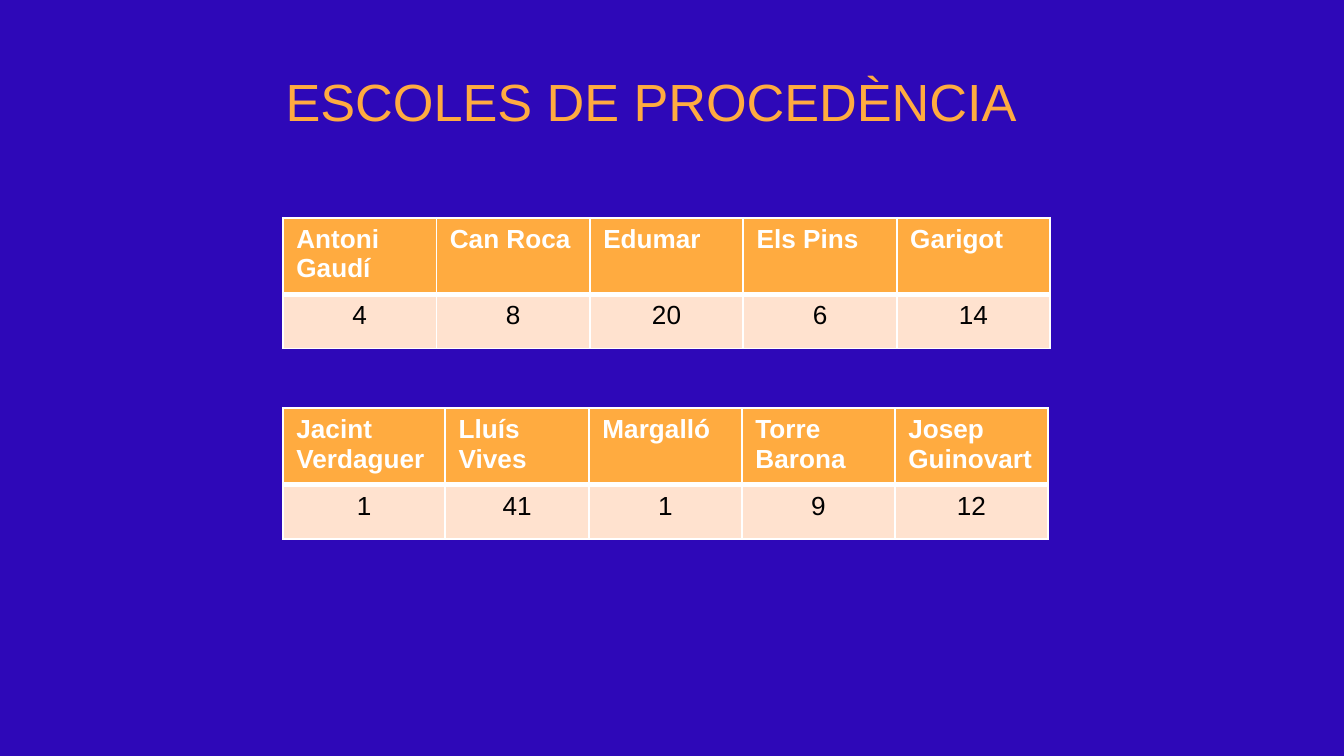
from dataclasses import dataclass

from lxml.etree import SubElement
from pptx import Presentation
from pptx.dml.color import RGBColor
from pptx.enum.text import MSO_ANCHOR, PP_ALIGN
from pptx.oxml.ns import qn
from pptx.slide import Slide
from pptx.table import _Cell
from pptx.text.text import TextFrame
from pptx.util import Emu, Inches, Pt

WIDE = Inches(10)
HIGH = Emu(WIDE * 9 // 16)
FONT = "Arial"
HUES = {
    "back": "2E08B8",
    "gold": "FFAB40",
    "peach": "FFE2CF",
    "white": "FFFFFF",
    "black": "000000",
}
ROWS = (10.1, 7.2)  # header and count rows, percent of slide height


@dataclass
class Grid:
    """Schools and pupil counts; lengths are percent of the slide."""
    left: float
    top: float
    cols: tuple[float, ...]
    pupils: dict[str, int]


GRIDS = (
    Grid(21.05, 28.8, (11.42,) * 5,
         {"Antoni\nGaudí": 4, "Can Roca": 8, "Edumar": 20,
          "Els Pins": 6, "Garigot": 14}),
    Grid(21.05, 54, (12.08, 10.7, 11.38, 11.38, 11.38),
         {"Jacint Verdaguer": 1, "Lluís Vives": 41, "Margalló": 1,
          "Torre Barona": 9, "Josep Guinovart": 12}),
)


def across(share: float) -> Emu:
    return Emu(round(WIDE * share / 100))


def down(share: float) -> Emu:
    return Emu(round(HIGH * share / 100))


def color(name: str) -> RGBColor:
    return RGBColor.from_string(HUES[name])


def write(frame: TextFrame, text: str, *, size: float, hue: str,
          bold: bool = False, align: PP_ALIGN = PP_ALIGN.LEFT) -> None:
    frame.text = text
    frame.word_wrap = True
    for para in frame.paragraphs:
        para.alignment = align
        for run in para.runs:
            font = run.font
            font.name, font.size, font.bold = FONT, Pt(size), bold
            font.color.rgb = color(hue)


def edge(cell: _Cell, top: float, base: float) -> None:
    """Draw white cell borders, with the given widths above and below."""
    props = cell._tc.get_or_add_tcPr()
    for side, width in (("L", 1), ("R", 1), ("T", top), ("B", base)):
        line = SubElement(props, qn(f"a:ln{side}"), w=str(Pt(width)))
        fill = SubElement(line, qn("a:solidFill"))
        SubElement(fill, qn("a:srgbClr"), val=HUES["white"])


def paint(cell: _Cell, hue: str, *, top: float = 1, base: float = 1) -> None:
    edge(cell, top, base)
    cell.fill.solid()
    cell.fill.fore_color.rgb = color(hue)


def draw(slide: Slide, grid: Grid) -> None:
    table = slide.shapes.add_table(
        len(ROWS), len(grid.cols), across(grid.left), down(grid.top),
        across(sum(grid.cols)), down(sum(ROWS))).table
    for row, share in zip(table.rows, ROWS):
        row.height = down(share)
    for col, share in zip(table.columns, grid.cols):
        col.width = across(share)
    for i, (school, count) in enumerate(grid.pupils.items()):
        head, body = table.cell(0, i), table.cell(1, i)
        # A thick rule parts each school from its count
        paint(head, "gold", base=3)
        write(head.text_frame, school, size=14, hue="white", bold=True)
        paint(body, "peach", top=3)
        write(body.text_frame, str(count), size=14, hue="black",
              align=PP_ALIGN.CENTER)


def main() -> None:
    deck = Presentation()
    deck.slide_width, deck.slide_height = WIDE, HIGH
    slide = deck.slides.add_slide(deck.slide_layouts[5])
    slide.background.fill.solid()
    slide.background.fill.fore_color.rgb = color("back")

    # Title
    title = slide.shapes.title
    title.left, title.top = across(20.25), down(8.2)
    title.width, title.height = across(63.7), down(10.1)
    title.text_frame.vertical_anchor = MSO_ANCHOR.TOP
    write(title.text_frame, "ESCOLES DE PROCEDÈNCIA", size=28, hue="gold")

    # School tables
    for grid in GRIDS:
        draw(slide, grid)
    deck.save("out.pptx")


if __name__ == "__main__":
    main()
